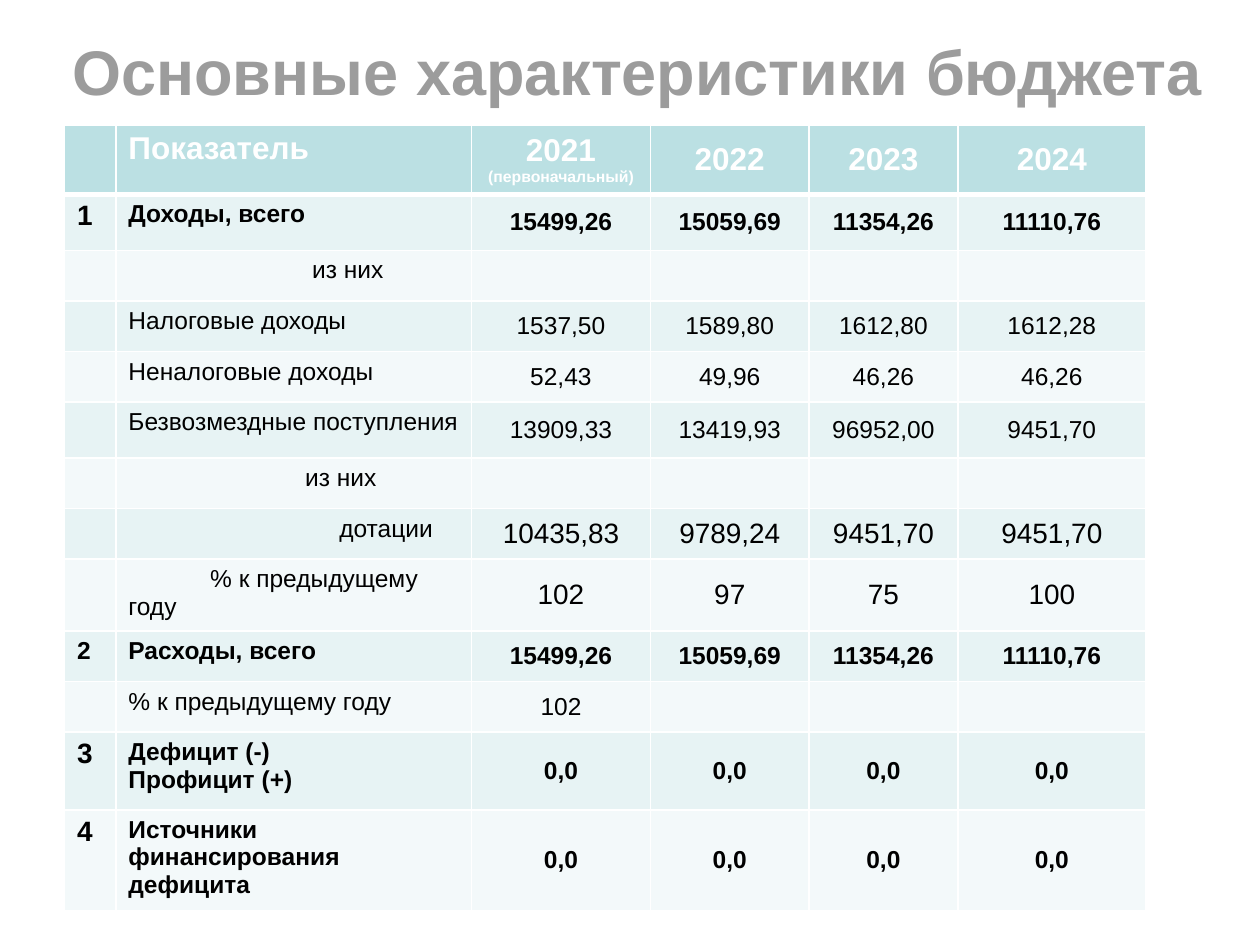
"""Build the slide with the main figures of the budget."""
from lxml.etree import SubElement
from pptx import Presentation
from pptx.dml.color import RGBColor
from pptx.enum.text import MSO_ANCHOR as Anchor, MSO_AUTO_SIZE as AutoSize, PP_ALIGN as Align
from pptx.oxml.ns import qn
from pptx.util import Pt

COLORS = {"title": "9C9C9C", "header": "BBE0E3", "odd": "E7F3F4", "even": "F3F9FA",
          "white": "FFFFFF", "black": "000000"}
COLUMN_WIDTHS = [29.3, 203.3, 102.2, 90.7, 85, 107.5]
ROW_HEIGHTS = [39.4, 32, 29, 28.8, 28.8, 32, 29, 28.8, 41, 29, 28.8, 44.5, 57.5]
YEARS = ["2021\n(первоначальный)", "2022", "2023", "2024"]
TOTALS = ["15499,26", "15059,69", "11354,26", "11110,76"]
ZEROS = ["0,0"] * 4
BLANK = [""] * 4
BOLD = {"bold": True}
ROWS = [
    ("1", "Доходы, всего", TOTALS, BOLD),
    ("", "из них", BLANK, {"indent": 105}),
    ("", "Налоговые доходы", ["1537,50", "1589,80", "1612,80", "1612,28"], {}),
    ("", "Неналоговые доходы", ["52,43", "49,96", "46,26", "46,26"], {}),
    ("", "Безвозмездные поступления", ["13909,33", "13419,93", "96952,00", "9451,70"], {}),
    ("", "из них", BLANK, {"indent": 101}),
    ("", "дотации", ["10435,83", "9789,24", "9451,70", "9451,70"],
     {"indent": 120.5, "value_size": 16}),
    ("", "% к предыдущему году", ["102", "97", "75", "100"], {"indent": 46.7, "value_size": 16}),
    ("2", "Расходы, всего", TOTALS, {"bold": True, "number_size": 14}),
    ("", "% к предыдущему году", ["102", "", "", ""], {}),
    ("3", "Дефицит (-)\nПрофицит (+)", ZEROS, BOLD),
    ("4", "Источники финансирования дефицита", ZEROS, BOLD),
]


def write_text(para, text, size, color, bold=False):
    """Add one formatted span to a paragraph."""
    span = para.add_run()
    span.text = text
    for name, value in {"name": "Arial", "size": Pt(size), "bold": bold}.items():
        setattr(span.font, name, value)
    span.font.color.rgb = RGBColor.from_string(COLORS[color])


def add_title(page, text):
    """Place the slide heading."""
    box = page.shapes.add_textbox(Pt(31), Pt(15.1), Pt(666.7), Pt(51.1))
    frame = box.text_frame
    for name, value in {"word_wrap": False, "auto_size": AutoSize.SHAPE_TO_FIT_TEXT}.items():
        setattr(frame, name, value)
    para = frame.paragraphs[0]
    para.alignment = Align.CENTER
    write_text(para, text, 36, "title", True)


def style_cell(cell, fill, bottom=1):
    """Give a cell white borders and a plain fill."""
    properties = cell._tc.get_or_add_tcPr()
    for tag, width in {"lnL": 1, "lnR": 1, "lnT": 1, "lnB": bottom}.items():
        line = SubElement(properties, qn(f"a:{tag}"), w=str(Pt(width)))
        color = SubElement(SubElement(line, qn("a:solidFill")), qn("a:srgbClr"))
        color.set("val", COLORS["white"])
    cell.fill.solid()
    cell.fill.fore_color.rgb = RGBColor.from_string(COLORS[fill])


def fill_cell(cell, text, sizes, color, bold, centered=False, indent=0):
    """Write the lines of a cell, each in its own paragraph."""
    if not text:
        return
    if centered:
        cell.vertical_anchor = Anchor.MIDDLE
    frame = cell.text_frame
    for index, line in enumerate(text.split("\n")):
        para = frame.add_paragraph() if index else frame.paragraphs[0]
        if centered:
            para.alignment = Align.CENTER
        if indent:
            para._p.get_or_add_pPr().set("indent", str(Pt(indent)))
        write_text(para, line, sizes[min(index, len(sizes) - 1)], color, bold)


def fill_header(table):
    """Fill the heading row."""
    for column, text in enumerate(["", "Показатель", *YEARS]):
        cell = table.cell(0, column)
        style_cell(cell, "header", bottom=3)
        fill_cell(cell, text, [18, 9], "white", True, centered=column > 1)


def fill_row(table, row, number, label, values, look):
    """Fill one row of figures."""
    bold = look.get("bold", False)
    sizes = [look.get("number_size", 16), 14] + [look.get("value_size", 14)] * len(values)
    for column, text in enumerate([number, label, *values]):
        cell = table.cell(row, column)
        style_cell(cell, "odd" if row % 2 else "even")
        indent = look.get("indent", 0) if column == 1 else 0
        fill_cell(cell, text, [sizes[column]], "black", bold, column > 1, indent)


def add_budget_table(page):
    """Place the table of budget figures."""
    frame = page.shapes.add_table(len(ROW_HEIGHTS), len(COLUMN_WIDTHS), Pt(36.9), Pt(71.4),
                                  Pt(sum(COLUMN_WIDTHS)), Pt(sum(ROW_HEIGHTS)))
    table = frame.table
    for column, width in zip(table.columns, COLUMN_WIDTHS):
        column.width = Pt(width)
    for row, height in zip(table.rows, ROW_HEIGHTS):
        row.height = Pt(height)
    fill_header(table)
    for index, content in enumerate(ROWS, start=1):
        fill_row(table, index, *content)


def main():
    """Build and save the deck."""
    deck = Presentation()
    deck.slide_width, deck.slide_height = Pt(720), Pt(540)
    page = deck.slides.add_slide(deck.slide_layouts[6])
    add_title(page, "Основные характеристики бюджета")
    add_budget_table(page)
    deck.save("out.pptx")


if __name__ == "__main__":
    main()
